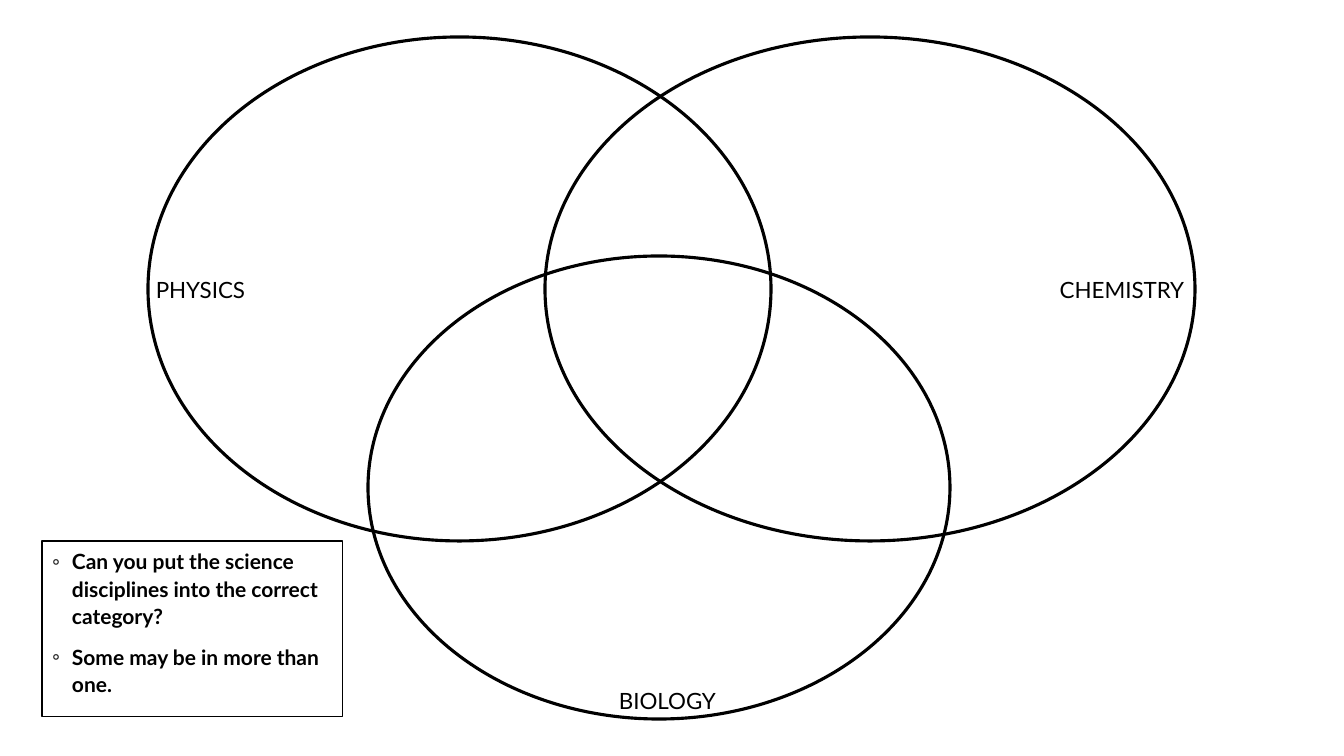
from lxml import etree
from pptx import Presentation
from pptx.dml.color import RGBColor
from pptx.enum.shapes import MSO_SHAPE
from pptx.enum.text import MSO_ANCHOR, PP_ALIGN
from pptx.oxml.ns import qn
from pptx.util import Emu, Pt

OVAL, RECT = MSO_SHAPE.OVAL, MSO_SHAPE.RECTANGLE
LEFT, CENTER, TOP = PP_ALIGN.LEFT, PP_ALIGN.CENTER, MSO_ANCHOR.TOP

# Boxes are left, top, width, height in px
SIZE = (1344, 756)
RINGS = [
    (148, 37, 623, 504),
    (545, 37, 650, 504),
    (368, 256, 582, 463),
]
LABELS = [
    ("PHYSICS", (122, 276, 157, 64)),
    ("CHEMISTRY", (1058, 276, 128, 64)),
    ("BIOLOGY", (589, 687, 157, 31)),
]
TASK_BOX = (42, 541, 301, 176)
TASKS = [
    "Can you put the science disciplines into the correct category?",
    "Some may be in more than one.",
]
INDENT = 20
PAD = (10, 5, 10, 5)

THEME = {
    "font": "Lato",
    "ink": "000000",
    "paper": "FFFFFF",
    "bullet": "262626",
    "label": 16,
    "task": 15,
    "ring": 2.25,
    "frame": 0.75,
}


def px(n):
    return Emu(round(n * 914400 / 100.8))


def color(name):
    return RGBColor.from_string(THEME[name])


def outline(slide, kind, box, width):
    shape = slide.shapes.add_shape(kind, *map(px, box))
    shape.shadow.inherit = False
    shape.fill.background()
    shape.line.color.rgb = color("ink")
    shape.line.width = Pt(THEME[width])
    return shape


def setup(frame, pad):
    frame.word_wrap = True
    frame.vertical_anchor = TOP
    (frame.margin_left, frame.margin_top,
     frame.margin_right, frame.margin_bottom) = map(px, pad)


def write(para, text, size, bold=False):
    run = para.add_run()
    run.text = text
    font = run.font
    font.name = THEME["font"]
    font.size = Pt(THEME[size])
    font.bold = bold
    font.color.rgb = color("ink")


def bullet(para):
    props = para._p.get_or_add_pPr()
    props.set("marL", str(px(INDENT)))
    props.set("indent", str(-px(INDENT)))
    tint = etree.SubElement(props, qn("a:buClr"))
    etree.SubElement(tint, qn("a:srgbClr"), val=THEME["bullet"])
    etree.SubElement(props, qn("a:buFont"), typeface=THEME["font"])
    etree.SubElement(props, qn("a:buChar"), char="◦")


def main():
    deck = Presentation()
    deck.slide_width, deck.slide_height = map(px, SIZE)
    slide = deck.slides.add_slide(deck.slide_layouts[6])

    for box in RINGS:
        outline(slide, OVAL, box, "ring")

    for text, box in LABELS:
        frame = slide.shapes.add_textbox(*map(px, box)).text_frame
        setup(frame, (0, 0, 0, 0))
        para = frame.paragraphs[0]
        para.alignment = CENTER
        write(para, text, "label")

    card = outline(slide, RECT, TASK_BOX, "frame")
    card.fill.solid()
    card.fill.fore_color.rgb = color("paper")
    frame = card.text_frame
    setup(frame, PAD)
    for i, text in enumerate(TASKS):
        para = frame.add_paragraph() if i else frame.paragraphs[0]
        para.alignment = LEFT
        para.line_spacing = 1.1
        para.space_before = Pt(9 if i else 0)
        bullet(para)
        write(para, text, "task", bold=True)

    deck.save("out.pptx")


if __name__ == "__main__":
    main()
